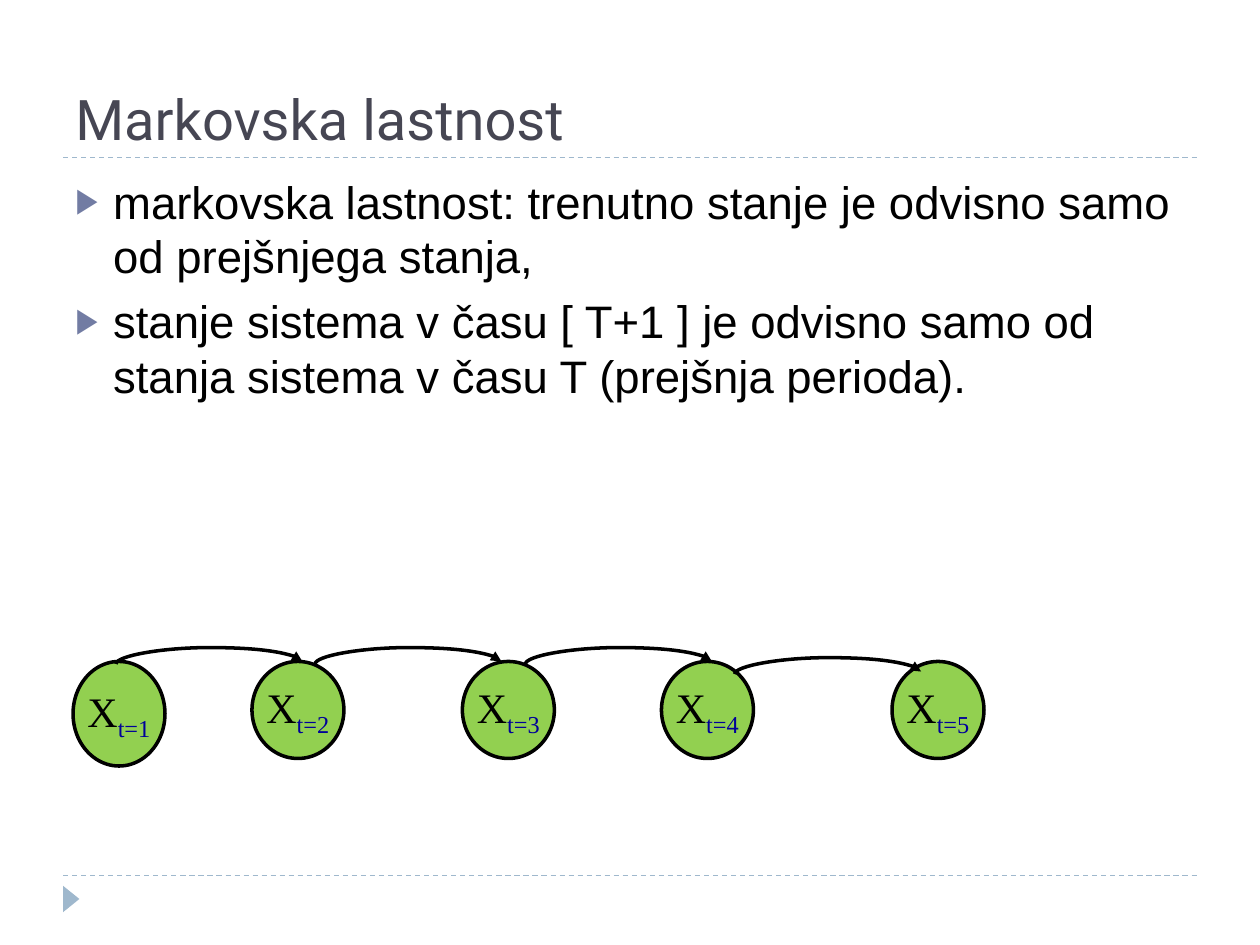
import pptx
import pptx.dml.color
import pptx.enum.dml
import pptx.enum.shapes
import pptx.enum.text
import pptx.oxml
import pptx.oxml.ns
import pptx.util
from pptx.util import Inches

TITLE = "Markovska lastnost"
BULLETS = [
    "markovska lastnost: trenutno stanje je odvisno samo od prejšnjega stanja,",
    "stanje sistema v času [ T+1 ] je odvisno samo od stanja sistema v času T (prejšnja perioda).",
]
# label, left, height
STATES = [
    ("t=1", 0.58, 0.83),
    ("t=2", 2.00, 0.77),
    ("t=3", 3.67, 0.77),
    ("t=4", 5.25, 0.77),
    ("t=5", 7.08, 0.77),
]
STATE_TOP, STATE_WIDTH = 5.25, 0.73
# start x, start y
ARCS = [(0.92, 5.27), (2.50, 5.27), (4.17, 5.27), (5.83, 5.35)]
ARC_SPAN, ARC_DROP, ARC_HEIGHT = 1.48, 0.02, 0.13
RULES = [1.25, 6.95]
PALE_BLUE = "9FB8CD"


def color(value):
    return pptx.dml.color.RGBColor.from_string(value)


def add_xml(parent, tag, **attributes):
    child = pptx.oxml.parse_xml(f"<a:{tag} {pptx.oxml.ns.nsdecls('a')}/>")
    for name, value in attributes.items():
        child.set(name, str(value))
    parent.append(child)
    return child


def add_span(para, text, font, size, value):
    span = para.add_run()
    span.text = text
    span.font.name = font
    span.font.size = pptx.util.Pt(size)
    span.font.color.rgb = color(value)
    return span


def add_text_frame(page, left, top, width, height, anchor):
    box = page.shapes.add_textbox(*map(Inches, (left, top, width, height)))
    box.text_frame.word_wrap = True
    box.text_frame.vertical_anchor = anchor
    return box.text_frame


def add_line(page, kind, start, end, value, width):
    line = page.shapes.add_connector(kind, *map(Inches, (*start, *end)))
    line.line.color.rgb = color(value)
    line.line.width = pptx.util.Pt(width)
    add_xml(line._element.spPr, "effectLst")
    return line


def add_bullet(para):
    properties = para._p.get_or_add_pPr()
    properties.set("marL", str(Inches(0.3)))
    properties.set("indent", str(-Inches(0.3)))
    para.space_before = pptx.util.Pt(6)
    add_xml(add_xml(properties, "buClr"), "srgbClr", val="727CA3")
    add_xml(properties, "buSzPct", val=76000)
    add_xml(properties, "buFont", typeface="Arial")
    add_xml(properties, "buChar", char="▶")


def add_state(page, label, left, height):
    state = page.shapes.add_shape(
        pptx.enum.shapes.MSO_SHAPE.OVAL,
        *map(Inches, (left, STATE_TOP, STATE_WIDTH, height)))
    state.shadow.inherit = False
    state.fill.solid()
    state.fill.fore_color.rgb = color("92D050")
    state.line.color.rgb = color("000000")
    state.line.width = pptx.util.Pt(2)
    frame = state.text_frame
    frame.word_wrap = False
    frame.vertical_anchor = pptx.enum.text.MSO_ANCHOR.MIDDLE
    para = frame.paragraphs[0]
    para.alignment = pptx.enum.text.PP_ALIGN.CENTER
    add_span(para, "X", "Times New Roman", 24, "000000")
    index = add_span(para, label, "Times New Roman", 24, "000099")
    index.font._element.set("baseline", "-25000")


def add_arc(page, x, y):
    """Draw a curve that rises from (x, y) and comes down on the next state."""
    middle_x, middle_y = x + ARC_SPAN / 2, y - ARC_DROP / 2
    # The frame is stated before its quarter turn, so width and height swap.
    half_width, half_height = ARC_DROP / 2, ARC_SPAN / 2
    arc = add_line(page, pptx.enum.shapes.MSO_CONNECTOR.CURVE,
                   (middle_x + half_width, middle_y + half_height),
                   (middle_x - half_width, middle_y - half_height), "000000", 2)
    properties = arc._element.spPr
    properties.find(pptx.oxml.ns.qn("a:xfrm")).set("rot", "5400000")
    guides = properties.find(pptx.oxml.ns.qn("a:prstGeom")).get_or_add_avLst()
    bend = round(ARC_HEIGHT / ARC_DROP * 100000)
    add_xml(guides, "gd", name="adj1", fmla=f"val {bend}")
    add_xml(arc.line._get_or_add_ln(), "tailEnd", type="triangle")


def main():
    deck = pptx.Presentation()
    deck.slide_width, deck.slide_height = Inches(10), Inches(7.5)
    page = deck.slides.add_slide(deck.slide_layouts[6])

    for y in RULES:
        rule = add_line(page, pptx.enum.shapes.MSO_CONNECTOR.STRAIGHT,
                        (0.5, y), (9.5, y), PALE_BLUE, 0.75)
        rule.line.dash_style = pptx.enum.dml.MSO_LINE.DASH

    marker = page.shapes.add_shape(
        pptx.enum.shapes.MSO_SHAPE.ISOSCELES_TRIANGLE,
        *map(Inches, (0.46, 7.07, 0.21, 0.13)))
    marker.rotation = 90
    marker.shadow.inherit = False
    marker.fill.solid()
    marker.fill.fore_color.rgb = color(PALE_BLUE)
    marker.line.fill.background()

    title = add_text_frame(page, 0.5, 0.17, 9, 1.08, pptx.enum.text.MSO_ANCHOR.BOTTOM)
    add_span(title.paragraphs[0], TITLE, "Roboto", 32, "464653")

    body = add_text_frame(page, 0.5, 1.33, 9, 5.4, pptx.enum.text.MSO_ANCHOR.TOP)
    for number, text in enumerate(BULLETS):
        para = body.add_paragraph() if number else body.paragraphs[0]
        add_bullet(para)
        add_span(para, text, "Arial", 26, "000000")

    for state in STATES:
        add_state(page, *state)
    for start in ARCS:
        add_arc(page, *start)

    deck.save("out.pptx")


if __name__ == "__main__":
    main()
